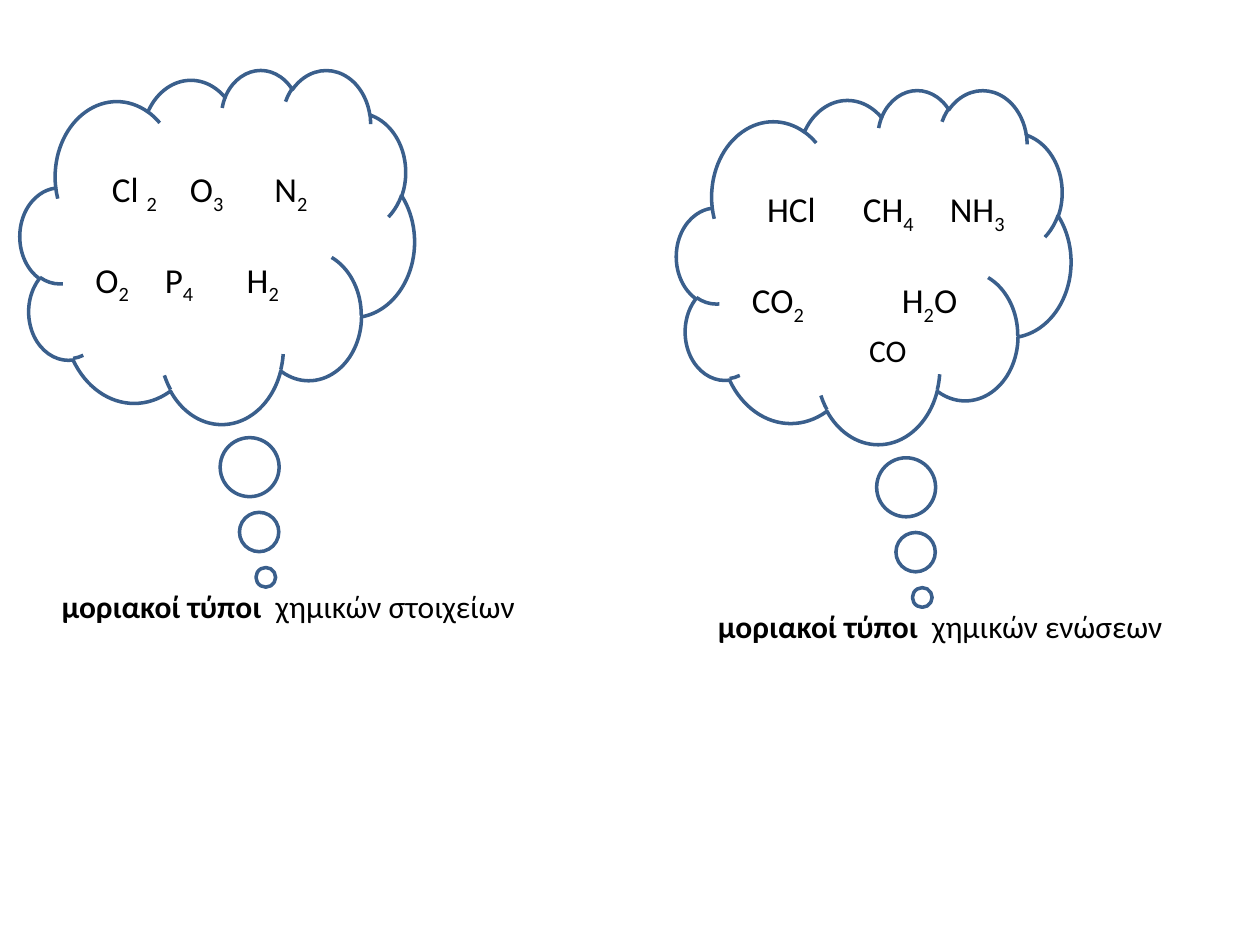
from dataclasses import dataclass

from lxml import etree
from pptx import Presentation
from pptx.dml.color import RGBColor
from pptx.enum.shapes import MSO_SHAPE
from pptx.oxml.ns import qn
from pptx.util import Inches, Pt

CLOUD = MSO_SHAPE.CLOUD_CALLOUT
FONT = "Calibri"
COLORS = {"text": "000000", "line": "3A5F8C"}


@dataclass
class Item:
    stop: float
    terms: list[str]


@dataclass
class Group:
    left: float
    top: float
    rows: list[list[Item]]
    kind: str
    width: float


GROUPS = [
    Group(0.16, 0.55, [
        [Item(0.24, ["Cl ", "2"]), Item(0.86, ["O", "3"]), Item(1.53, ["N", "2"])],
        [Item(0.11, ["O", "2"]), Item(0.66, ["P", "4"]), Item(1.31, ["H", "2"])],
    ], "χημικών στοιχείων", 3.93),
    Group(5.37, 0.71, [
        [Item(0.23, ["HCl"]), Item(0.99, ["CH", "4"]), Item(1.68, ["NH", "3"])],
        [Item(0.11, ["CO", "2"]), Item(1.3, ["H", "2", "Ο"])],
    ], "χημικών ενώσεων", 3.77),
]


def add_run(para, text: str, size: int, bold: bool = False, sub: bool = False) -> None:
    run = para.add_run()
    run.text = text
    font = run.font
    font.name, font.size, font.bold = FONT, Pt(size), bold
    font.color.rgb = RGBColor.from_string(COLORS["text"])
    if sub:
        run._r.get_or_add_rPr().set("baseline", "-25000")


def add_tabs(para, stops: list[float]) -> None:
    tabs = etree.SubElement(para._p.get_or_add_pPr(), qn("a:tabLst"))
    for stop in stops:
        etree.SubElement(tabs, qn("a:tab"), pos=str(Inches(stop)), algn="l")


def add_box(slide, left: float, top: float, width: float, height: float):
    box = slide.shapes.add_textbox(Inches(left), Inches(top), Inches(width), Inches(height))
    box.text_frame.word_wrap = True
    return box.text_frame


def add_rows(slide, group: Group) -> None:
    frame = add_box(slide, group.left + 0.39, group.top + 0.39, 2.5, 2.12)
    frame.margin_top = Inches(0.39)
    for num, row in enumerate(group.rows):
        para = frame.add_paragraph() if num else frame.paragraphs[0]
        if num:
            para.space_before = Pt(24.4)
        add_tabs(para, [item.stop for item in row])
        for item in row:
            add_run(para, "\t", 20)
            for pos, term in enumerate(item.terms):
                add_run(para, term, 20, sub=pos == 1)


def add_label(slide, group: Group) -> None:
    frame = add_box(slide, group.left + 0.23, group.top + 4.06, group.width, 0.4)
    para = frame.paragraphs[0]
    add_tabs(para, [1.7])
    add_run(para, "μοριακοί τύποι", 18, bold=True)
    add_run(para, "\t", 18)
    add_run(para, group.kind, 18)


def add_cloud(slide, group: Group) -> None:
    cloud = slide.shapes.add_shape(
        CLOUD, Inches(group.left), Inches(group.top), Inches(3.13), Inches(2.81))
    cloud.adjustments[0] = 0.123
    cloud.adjustments[1] = 0.935
    cloud.shadow.inherit = False
    cloud.fill.background()
    cloud.line.color.rgb = RGBColor.from_string(COLORS["line"])
    cloud.line.width = Pt(2)


def main() -> None:
    deck = Presentation()
    deck.slide_width, deck.slide_height = Inches(10), Inches(7.5)
    slide = deck.slides.add_slide(deck.slide_layouts[6])
    for group in GROUPS:
        add_rows(slide, group)
        add_label(slide, group)
        add_cloud(slide, group)
    frame = add_box(slide, 6.8, 2.58, 0.5, 0.4)
    frame.word_wrap = False
    add_run(frame.paragraphs[0], "CO", 18)
    deck.save("out.pptx")


if __name__ == "__main__":
    main()
